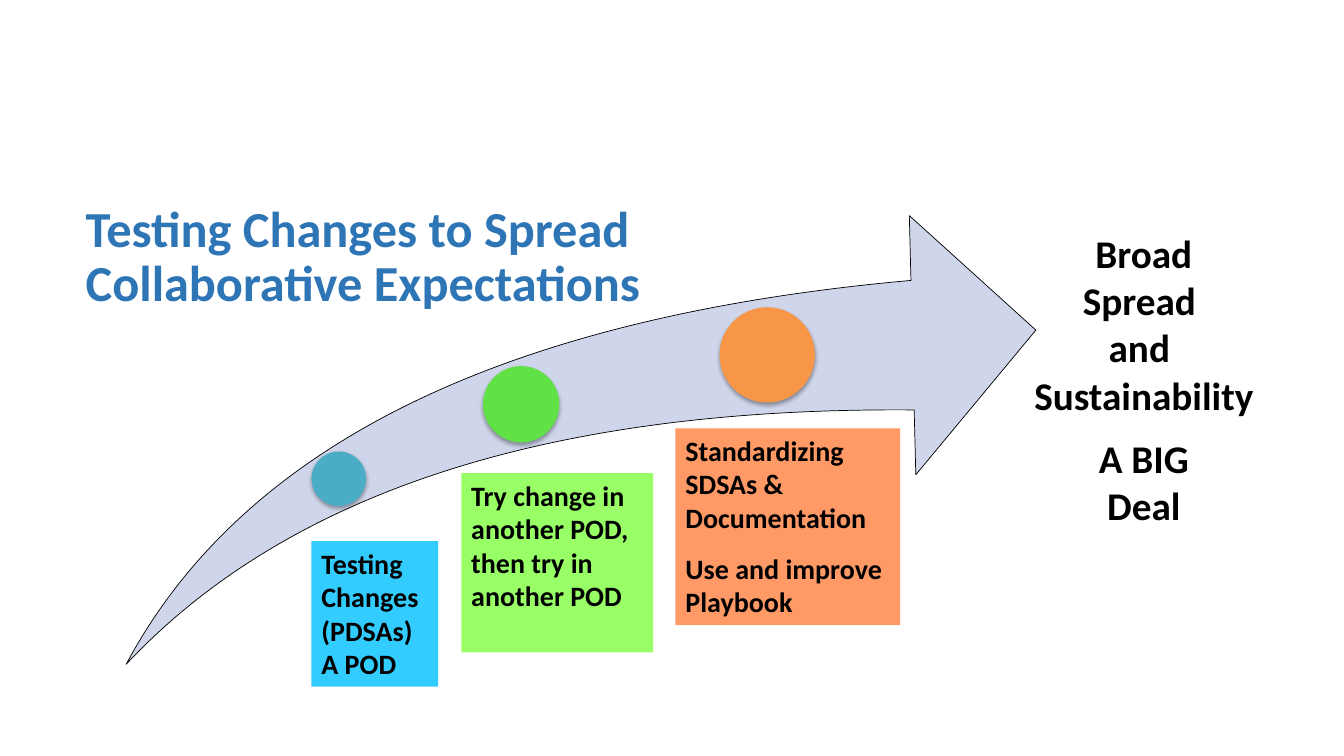
from copy import deepcopy

from lxml import etree
from pptx import Presentation
from pptx.dml.color import RGBColor
from pptx.enum.shapes import MSO_SHAPE
from pptx.enum.text import MSO_ANCHOR, MSO_AUTO_SIZE, PP_ALIGN
from pptx.oxml.ns import qn
from pptx.util import Pt

ARROW, CIRCLE, RECTANGLE = MSO_SHAPE.SWOOSH_ARROW, MSO_SHAPE.OVAL, MSO_SHAPE.RECTANGLE
LEFT, CENTER = PP_ALIGN.LEFT, PP_ALIGN.CENTER
TOP, MIDDLE = MSO_ANCHOR.TOP, MSO_ANCHOR.MIDDLE
NO_AUTOFIT = MSO_AUTO_SIZE.NONE
FONT = "Calibri"
GROUP_GAP = 12

# left, top, diameter, colour
STAGES = [
    (222.5, 322.5, 39, "4BACC6"),
    (345, 261.5, 54.5, "60E146"),
    (514, 219.5, 68, "F79646"),
]
# left, top, width, height, colour, groups of paragraphs
LABELS = [
    (222.5, 386.5, 90.5, 104, "33CCFF", [["Testing Changes (PDSAs)", "A POD"]]),
    (329.5, 338, 137, 128, "99FF66",
     [["Try change in another POD, then try in another POD"]]),
    (482.5, 306, 160.5, 140.5, "FF9966",
     [["Standardizing", "SDSAs & Documentation"], ["Use and improve Playbook"]]),
]
OUTCOME = [["Broad", "Spread ", "and ", "Sustainability"], ["A BIG", "Deal"]]


def colour(hex_string):
    return RGBColor.from_string(hex_string)


def write_text(shape, groups, size, font_colour="000000", align=LEFT,
               anchor=TOP, line_spacing=1.0):
    """Write groups of paragraphs, with a gap above each later group."""
    frame = shape.text_frame
    frame.word_wrap = True
    frame.auto_size = NO_AUTOFIT
    frame.vertical_anchor = anchor
    paragraph = None
    for group_number, group in enumerate(groups):
        for position, text in enumerate(group):
            paragraph = frame.add_paragraph() if paragraph else frame.paragraphs[0]
            paragraph.alignment = align
            paragraph.line_spacing = line_spacing
            paragraph.space_before = Pt(GROUP_GAP if group_number and not position else 0)
            for line_number, line in enumerate(text.split("\n")):
                if line_number:
                    paragraph.add_line_break()
                run = paragraph.add_run()
                run.text = line
                run.font.name = FONT
                run.font.size = Pt(size)
                run.font.bold = True
                run.font.color.rgb = colour(font_colour)
            for line_break in paragraph._p.findall(qn("a:br")):
                line_break.append(deepcopy(run._r.rPr))


def add_filled_shape(slide, kind, left, top, width, height, fill):
    shape = slide.shapes.add_shape(kind, Pt(left), Pt(top), Pt(width), Pt(height))
    shape.shadow.inherit = False
    shape.fill.solid()
    shape.fill.fore_color.rgb = colour(fill)
    shape.line.fill.background()
    return shape


def add_drop_shadow(shape):
    effects = shape._element.spPr.find(qn("a:effectLst"))
    shadow = etree.SubElement(effects, qn("a:outerShdw"), blurRad=str(Pt(3.1)),
                              dist=str(Pt(1.8)), dir="5400000", rotWithShape="0")
    black = etree.SubElement(shadow, qn("a:srgbClr"), val="000000")
    etree.SubElement(black, qn("a:alpha"), val="35000")


def add_title(slide):
    title = slide.shapes.title
    title.left, title.top, title.width, title.height = Pt(54), Pt(139.5), Pt(508.5), Pt(90)
    write_text(title, [["Testing Changes to Spread\nCollaborative Expectations"]], 36,
               font_colour="2E75B6", anchor=MIDDLE, line_spacing=0.9)


def add_arrow(slide):
    arrow = add_filled_shape(slide, ARROW, 105, 134.5, 626.5, 368, "CFD5EA")
    arrow.rotation = 5
    arrow.adjustments[0] = 0.25
    arrow.adjustments[1] = 0.25
    arrow.line.color.rgb = colour("000000")
    arrow.line.width = Pt(0.5)


def main():
    presentation = Presentation()
    presentation.slide_width, presentation.slide_height = Pt(960), Pt(540)
    slide = presentation.slides.add_slide(presentation.slide_layouts[5])
    add_title(slide)
    add_arrow(slide)
    for left, top, width, height, fill, groups in LABELS:
        label = add_filled_shape(slide, RECTANGLE, left, top, width, height, fill)
        write_text(label, groups, 20)
    outcome = slide.shapes.add_textbox(Pt(698.5), Pt(160.5), Pt(237), Pt(223))
    write_text(outcome, OUTCOME, 28, align=CENTER)
    for left, top, diameter, fill in STAGES:
        add_drop_shadow(add_filled_shape(slide, CIRCLE, left, top, diameter, diameter, fill))
    presentation.save("out.pptx")


if __name__ == "__main__":
    main()
